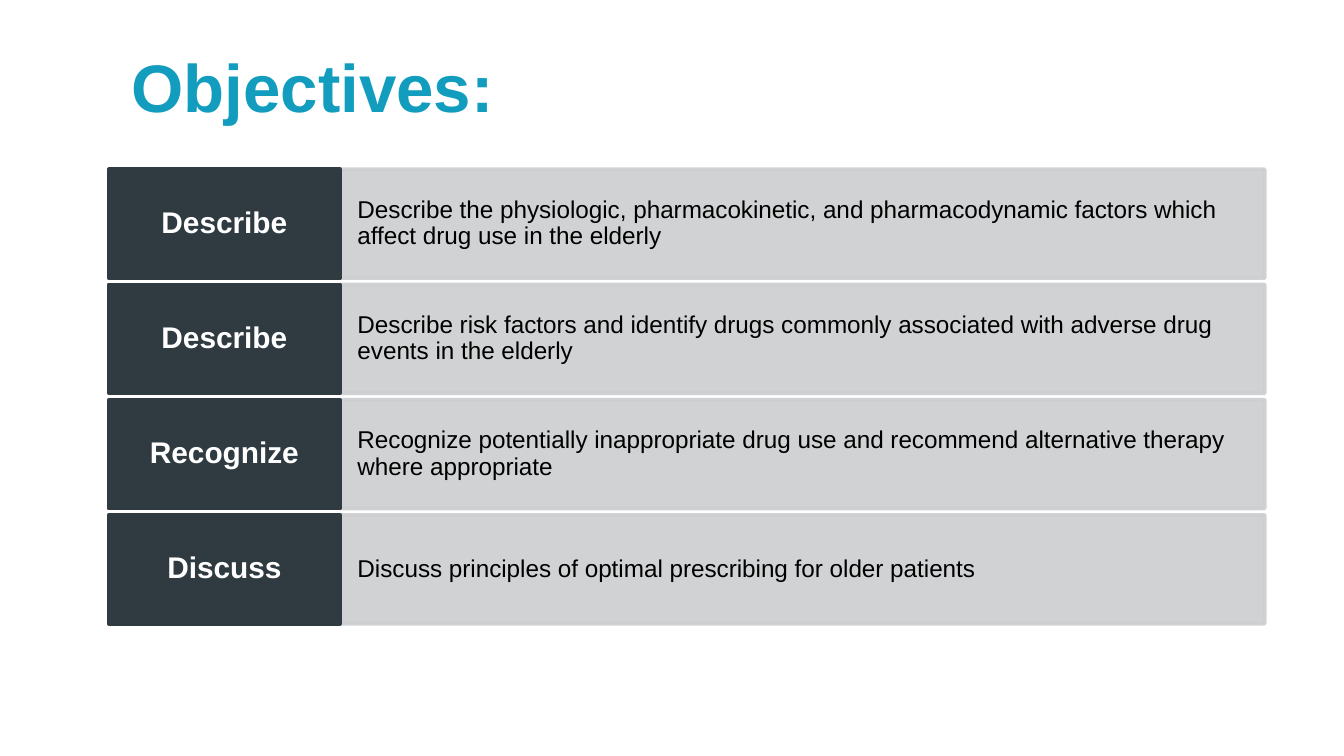
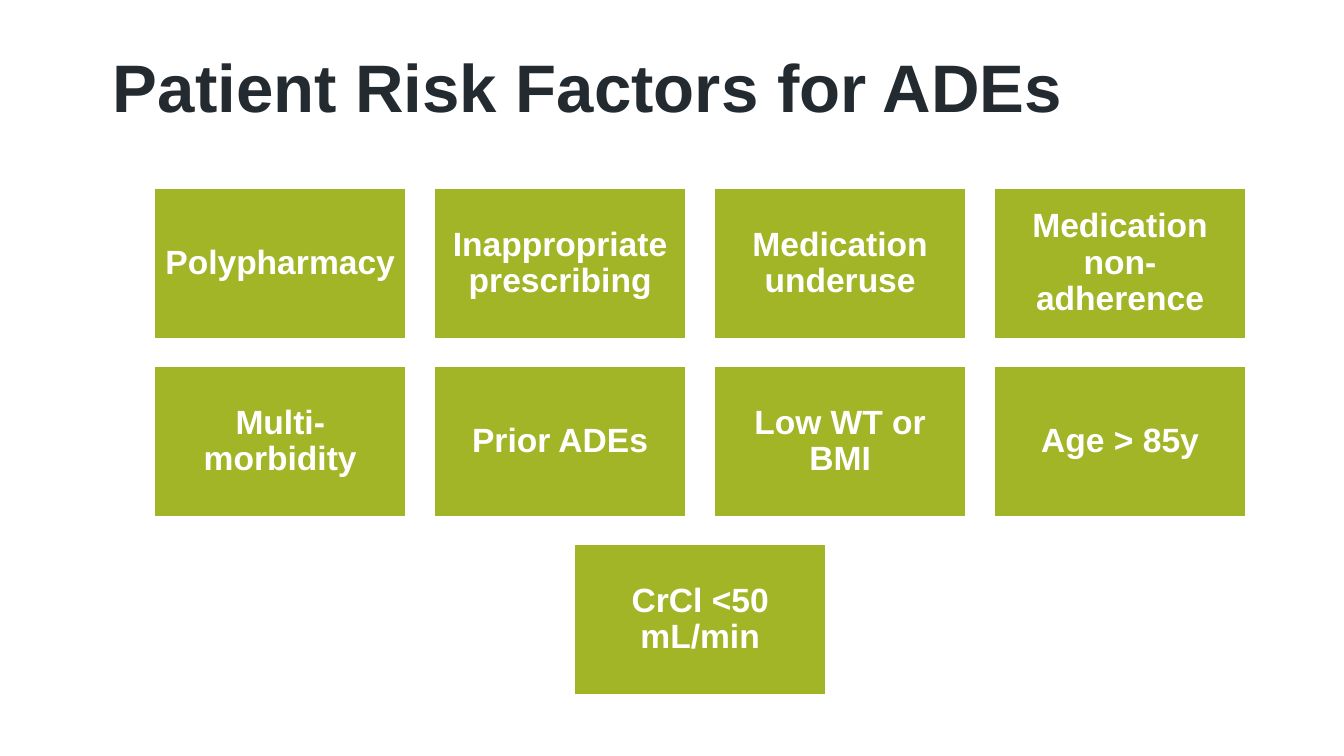
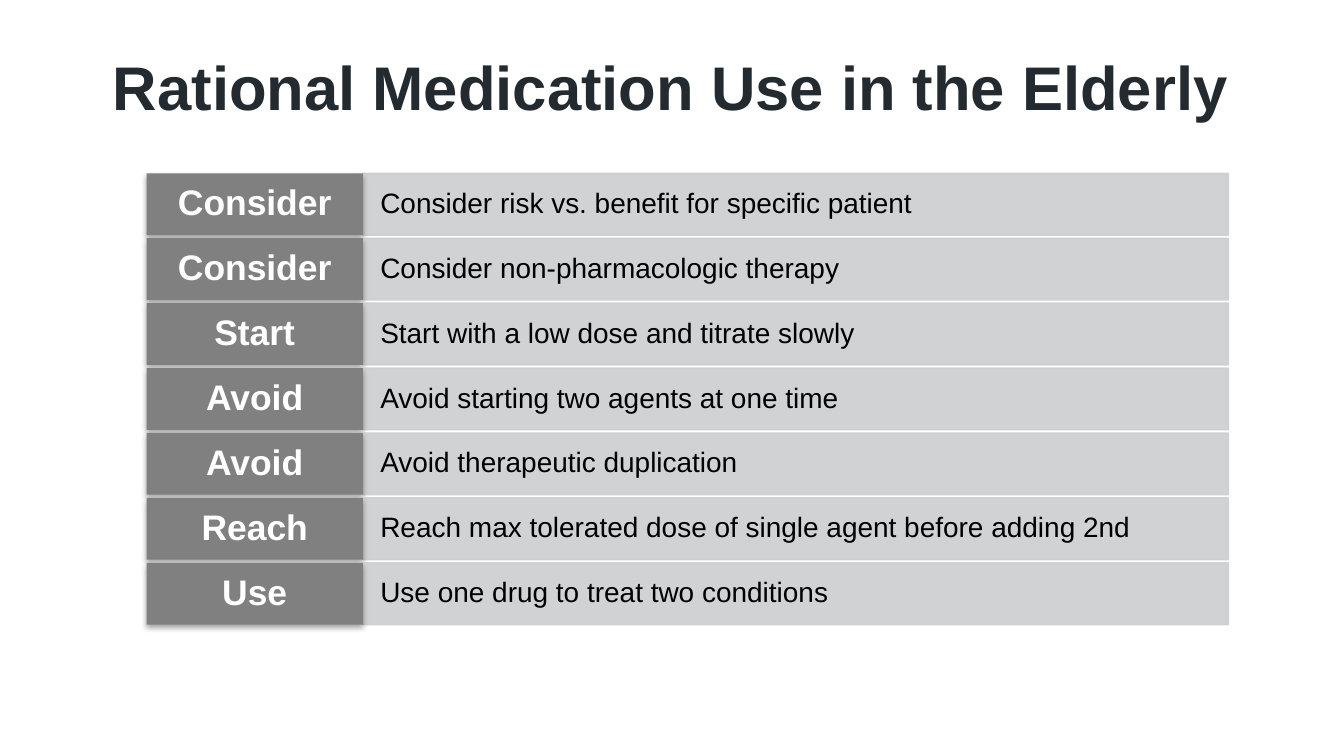
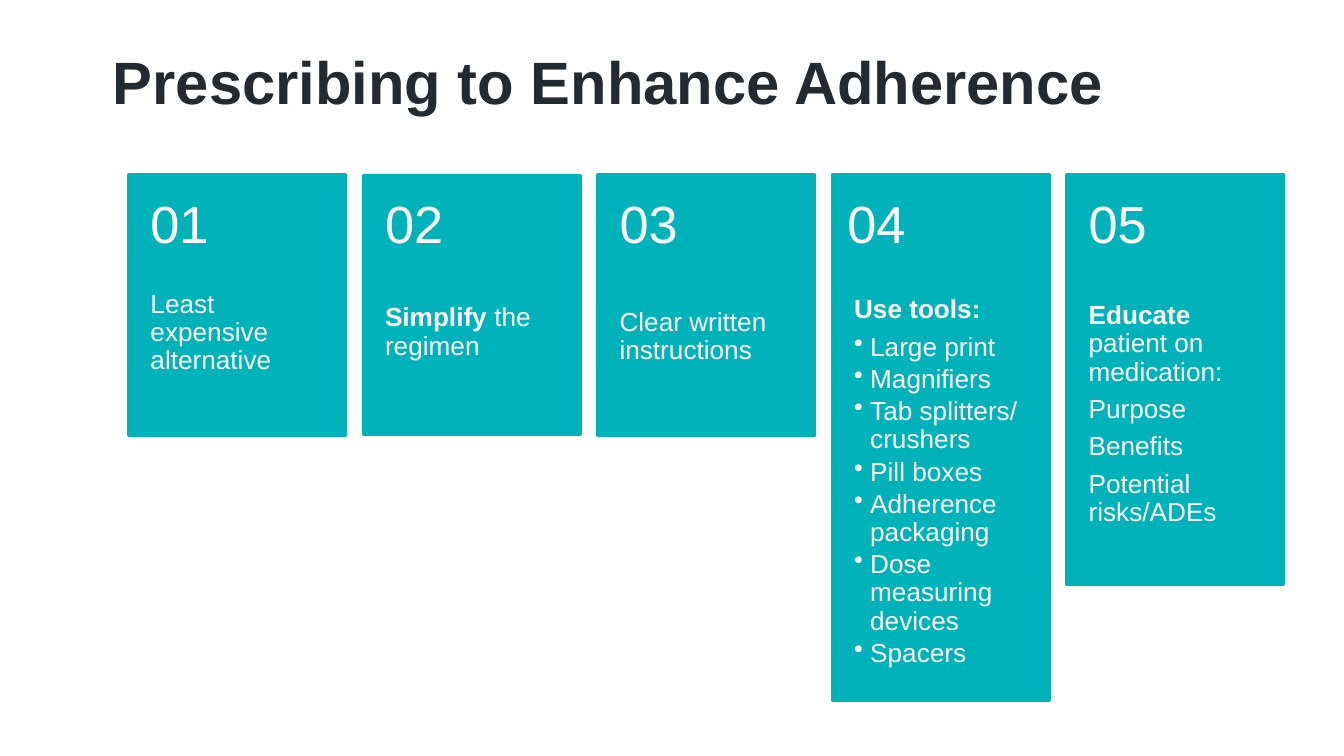
"""Build four slides on prescribing for older patients."""
from lxml.etree import SubElement
from pptx import Presentation
from pptx.dml.color import RGBColor
from pptx.enum.shapes import MSO_SHAPE as Shape
from pptx.enum.text import MSO_ANCHOR as Anchor, MSO_AUTO_SIZE as AutoSize, PP_ALIGN as Align
from pptx.oxml.ns import qn
from pptx.util import Inches, Pt

COLS, ROWS = 100, 56.25
FONT = "Arial"
COLORS = {
    "sky": "129DBF", "ink": "232B31", "slate": "2F3A41", "silver": "CDCECF",
    "grey": "808080", "lime": "A2B526", "teal": "00B2B9",
    "white": "FFFFFF", "black": "000000",
}

OBJECTIVES = [
    ("Describe", "Describe the physiologic, pharmacokinetic, and pharmacodynamic factors "
                 "which affect drug use in the elderly"),
    ("Describe", "Describe risk factors and identify drugs commonly associated with "
                 "adverse drug events in the elderly"),
    ("Recognize", "Recognize potentially inappropriate drug use and recommend alternative "
                  "therapy where appropriate"),
    ("Discuss", "Discuss principles of optimal prescribing for older patients"),
]
RISK_ROWS = [
    ["Polypharmacy", "Inappropriate prescribing", "Medication underuse",
     "Medication non-adherence"],
    ["Multi-morbidity", "Prior ADEs", "Low WT or BMI", "Age > 85y"],
    ["CrCl <50 mL/min"],
]
PRINCIPLES = [
    ("Consider", "Consider risk vs. benefit for specific patient"),
    ("Consider", "Consider non-pharmacologic therapy"),
    ("Start", "Start with a low dose and titrate slowly"),
    ("Avoid", "Avoid starting two agents at one time"),
    ("Avoid", "Avoid therapeutic duplication"),
    ("Reach", "Reach max tolerated dose of single agent before adding 2nd"),
    ("Use", "Use one drug to treat two conditions"),
]
TOOLS = ["Large print", "Magnifiers", "Tab splitters/ crushers", "Pill boxes",
         "Adherence packaging", "Dose measuring devices", "Spacers"]
CARDS = [
    dict(top=13, height=19.4, foot=3.6, lines=["Least expensive alternative"]),
    dict(top=13.1, height=19.2, foot=3.6, lines=[("Simplify", " the regimen")]),
    dict(top=13, height=19.4, foot=3, lines=["Clear written instructions"]),
    dict(top=13, height=39.1, foot=9, lines=[("Use tools:", "")], bullets=TOOLS, shift=-0.5),
    dict(top=13, height=30.5, foot=7,
         lines=[("Educate", " patient on medication:"), "Purpose", "Benefits",
                "Potential risks/ADEs"]),
]


class Deck:
    """Hold the shared style and the current slide."""

    def __init__(self):
        self.prs = Presentation()
        self.prs.slide_width, self.prs.slide_height = Inches(10), Inches(5.625)
        self.slide = None

    def box(self, x, y, w, h):
        dx, dy = self.prs.slide_width / COLS, self.prs.slide_height / ROWS
        return [int(v) for v in (x * dx, y * dy, w * dx, h * dy)]

    def title(self, text, size=36, color="ink", left=7.4, height=10.1):
        self.slide = self.prs.slides.add_slide(self.prs.slide_layouts[5])
        s = self.slide.shapes.title
        s.left, s.top, s.width, s.height = self.box(left, 1.7, 88.9, height)
        self.fill_text(s.text_frame, [text], size, color, (1, 0, 1, 0), bold=True, after=0)

    def fill_text(self, tf, lines, size, color, insets, bold=False, align=Align.LEFT,
                  after=0.35):
        tf.word_wrap, tf.auto_size = True, AutoSize.NONE
        tf.vertical_anchor = Anchor.MIDDLE
        (tf.margin_left, tf.margin_top,
         tf.margin_right, tf.margin_bottom) = self.box(*insets)
        for i, line in enumerate(lines):
            p = tf.add_paragraph() if i else tf.paragraphs[0]
            lead, rest = line if isinstance(line, tuple) else (line, "")
            p.text = lead
            p.runs[0].font.bold = bold or isinstance(line, tuple)
            if rest:
                r = p.add_run()
                r.text = rest
                r.font.bold = bold
            self.style(p, size, color, align, after)

    def style(self, p, size, color, align=Align.LEFT, after=0.35):
        p.alignment, p.line_spacing = align, 0.9
        p.space_before, p.space_after = Pt(0), Pt(round(size * after, 1))
        for r in p.runs:
            r.font.name, r.font.size = FONT, Pt(size)
            r.font.color.rgb = RGBColor.from_string(COLORS[color])

    def bullets(self, tf, lines, size, color):
        indent = self.box(1.2, 0, 0, 0)[0]
        for line in lines:
            p = tf.add_paragraph()
            p.text, p.level = line, 1
            pPr = p._p.get_or_add_pPr()
            pPr.set("marL", str(indent))
            pPr.set("indent", str(-indent))
            SubElement(pPr, qn("a:buChar"), char="•")
            self.style(p, size, color, after=0.15)

    def rect(self, place, fill, line=None, width=2, opacity=100):
        s = self.slide.shapes.add_shape(Shape.RECTANGLE, *self.box(*place))
        s.shadow.inherit = False
        s.fill.solid()
        s.fill.fore_color.rgb = RGBColor.from_string(COLORS[fill])
        if line:
            s.line.color.rgb = RGBColor.from_string(COLORS[line])
            s.line.width = Pt(width)
        else:
            s.line.fill.background()
        if opacity < 100:
            for clr in list(s._element.spPr.iter(qn("a:srgbClr"))):
                SubElement(clr, qn("a:alpha"), val=str(opacity * 1000))
        return s

    def text(self, place, lines, size, insets):
        s = self.slide.shapes.add_textbox(*self.box(*place))
        self.fill_text(s.text_frame, lines, size, "white", insets)
        return s.text_frame

    def drop_shadow(self, s):
        effects = s._element.spPr.find(qn("a:effectLst"))
        shadow = SubElement(effects, qn("a:outerShdw"), blurRad=str(Pt(3.1)),
                            dist=str(Pt(1.8)), dir="5400000", rotWithShape="0")
        clr = SubElement(shadow, qn("a:srgbClr"), val=COLORS["black"])
        SubElement(clr, qn("a:alpha"), val="35000")

    def verb_rows(self, rows, left, top, widths, height, pitch, sizes, pads, fill,
                  border, shadow=False):
        for i, (verb, detail) in enumerate(rows):
            y = top + i * pitch
            s = self.rect((left + widths[0], y, widths[1], height), "silver", "silver",
                          border, 90)
            self.fill_text(s.text_frame, [detail], sizes[1], "black", (1.3, pads[1]) * 2)
            s = self.rect((left, y, widths[0], height), fill, None if shadow else fill)
            if shadow:
                self.drop_shadow(s)
            self.fill_text(s.text_frame, [verb], sizes[0], "white", (0.9, pads[0]) * 2,
                           True, Align.CENTER)

    def tiles(self, rows, left, top, size, pitch):
        widest = max(len(row) for row in rows)
        for j, row in enumerate(rows):
            start = left + (widest - len(row)) * pitch[0] / 2
            for i, label in enumerate(row):
                s = self.rect((start + i * pitch[0], top + j * pitch[1], *size),
                              "lime", "white")
                self.fill_text(s.text_frame, [label], 18, "white", (0.7,) * 4, True,
                               Align.CENTER)

    def card(self, number, x, top, height, foot, lines, bullets=(), shift=0, width=16.1):
        self.rect((x, top, width, height), "teal", "teal")
        tf = self.text((x, top + 0.4 * height, width, 0.6 * height), lines, 14,
                       (1.6, 0, 1.6, foot))
        self.bullets(tf, bullets, 14, "white")
        self.text((x + shift, 13, width, 7.7), [f"{number:02}"], 28, (1.6, 1.8) * 2)


def main():
    deck = Deck()

    deck.title("Objectives:", color="sky", left=8.8)
    deck.verb_rows(OBJECTIVES, left=8.1, top=12.6, widths=(17.2, 68.8), height=8.1,
                   pitch=8.57, sizes=(16, 13), pads=(0.8, 2.1), fill="slate", border=2)

    deck.title("Patient Risk Factors for ADEs")
    deck.tiles(RISK_ROWS, left=11.4, top=13.9, size=(18.9, 11.4), pitch=(20.83, 13.25))

    deck.title("Rational Medication Use in the Elderly", size=33)
    deck.verb_rows(PRINCIPLES, left=10.9, top=12.9, widths=(16.1, 64.4), height=4.6,
                   pitch=4.83, sizes=(19, 15), pads=(0.5, 1.2), fill="grey",
                   border=0.75, shadow=True)

    deck.title("Prescribing to Enhance Adherence", size=32, height=9.2)
    for i, card in enumerate(CARDS):
        deck.card(i + 1, 9.6 + i * 17.45, **card)

    deck.prs.save("out.pptx")


if __name__ == "__main__":
    main()
